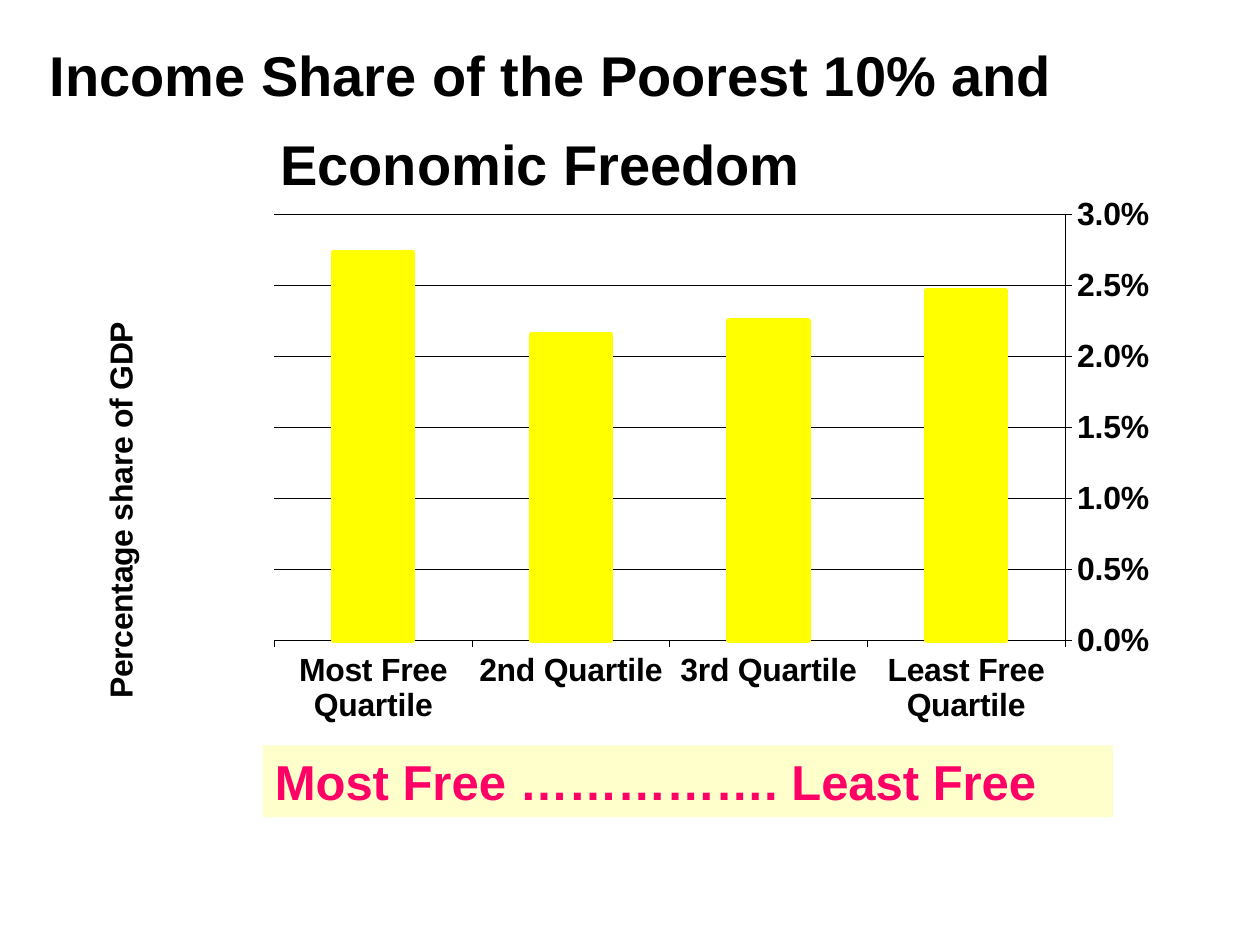
from lxml import etree
from pptx import Presentation
from pptx.chart.data import CategoryChartData
from pptx.dml.color import RGBColor
from pptx.enum.chart import XL_CHART_TYPE, XL_TICK_LABEL_POSITION, XL_TICK_MARK
from pptx.enum.shapes import MSO_SHAPE
from pptx.enum.text import MSO_ANCHOR, PP_ALIGN
from pptx.oxml.ns import qn
from pptx.util import Pt

BLACK = RGBColor(0x00, 0x00, 0x00)
YELLOW = RGBColor(0xFF, 0xFF, 0x00)
CREAM = RGBColor(0xFF, 0xFF, 0xCC)
PINK = RGBColor(0xFF, 0x00, 0x66)
COLUMN = XL_CHART_TYPE.COLUMN_CLUSTERED
LOW = XL_TICK_LABEL_POSITION.LOW
OUTSIDE = XL_TICK_MARK.OUTSIDE
RECTANGLE = MSO_SHAPE.RECTANGLE
MIDDLE = MSO_ANCHOR.MIDDLE
TOP = MSO_ANCHOR.TOP
CENTER = PP_ALIGN.CENTER
LEFT = PP_ALIGN.LEFT


def set_font(font, size, color, bold=True):
    font.name = "Arial"
    font.size = Pt(size)
    font.bold = bold
    font.color.rgb = color


def set_layout(parent, index, settings):
    old = parent.find(qn("c:layout"))
    if old is not None:
        parent.remove(old)
    layout = etree.Element(qn("c:layout"))
    manual = etree.SubElement(layout, qn("c:manualLayout"))
    for name, value in settings.items():
        etree.SubElement(manual, qn(f"c:{name}")).set("val", str(value))
    parent.insert(index, layout)


prs = Presentation()
prs.slide_width = Pt(720)
prs.slide_height = Pt(540)
s = prs.slides.add_slide(prs.slide_layouts[6])

tf = s.shapes.add_textbox(Pt(0), Pt(0), Pt(630), Pt(138)).text_frame
tf.word_wrap = True
tf.vertical_anchor = MIDDLE
p = tf.paragraphs[0]
p.alignment = CENTER
for text, size, bold in [
    ("Income Share of the Poorest 10% and Economic Freedom", 32, True),
    (" ", 44, False),
]:
    r = p.add_run()
    r.text = text
    set_font(r.font, size, BLACK, bold)

data = CategoryChartData(number_format="0.0%")
data.categories = [
    "Least Free Quartile", "3rd Quartile", "2nd Quartile", "Most Free Quartile",
]
data.add_series("Series 1", [0.0246, 0.0225, 0.0215, 0.0273])
chart = s.shapes.add_chart(
    COLUMN, Pt(22.3), Pt(112.3), Pt(634.3), Pt(321.8), data
).chart
chart.has_legend = False
chart.has_title = False
set_font(chart.font, 18.3, BLACK)

plot = chart.plots[0]
plot.gap_width = 150
plot.vary_by_categories = False
series = plot.series[0]
series.format.fill.solid()
series.format.fill.fore_color.rgb = YELLOW
series.format.line.color.rgb = YELLOW
series.format.line.width = Pt(3.05)

cat_axis = chart.category_axis
cat_axis.reverse_order = True
cat_axis.tick_label_position = LOW
val_axis = chart.value_axis
val_axis.minimum_scale = 0
val_axis.maximum_scale = 0.03
val_axis.major_unit = 0.005
val_axis.has_major_gridlines = True
val_axis.tick_labels.number_format = "0.0%"
val_axis.tick_labels.number_format_is_linked = False
for axis in (cat_axis, val_axis):
    axis.major_tick_mark = OUTSIDE
    set_font(axis.tick_labels.font, 18.3, BLACK)
for lined in (cat_axis, val_axis, val_axis.major_gridlines):
    lined.format.line.color.rgb = BLACK
    lined.format.line.width = Pt(0.25)

title = val_axis.axis_title
tf = title.text_frame
p = tf.paragraphs[0]
p.text = "Percentage share of GDP"
set_font(p.font, 18.3, BLACK)
body = tf._txBody.find(qn("a:bodyPr"))
body.set("rot", "-5400000")
body.set("vert", "horz")
set_layout(title._element, 1, {
    "xMode": "edge", "yMode": "edge", "x": 0.05, "y": 0.21,
})
plot_area = chart._chartSpace.find(f".//{qn('c:plotArea')}")
set_layout(plot_area, 0, {
    "layoutTarget": "inner", "xMode": "edge", "yMode": "edge",
    "x": 0.213, "y": 0.028, "w": 0.715, "h": 0.759,
})

sp = s.shapes.add_shape(RECTANGLE, Pt(150), Pt(426), Pt(486), Pt(41))
sp.shadow.inherit = False
sp.fill.solid()
sp.fill.fore_color.rgb = CREAM
sp.line.fill.background()
tf = sp.text_frame
tf.word_wrap = True
tf.vertical_anchor = TOP
p = tf.paragraphs[0]
p.text = "Most Free ……………. Least Free"
p.alignment = LEFT
set_font(p.font, 28, PINK)

prs.save("out.pptx")
